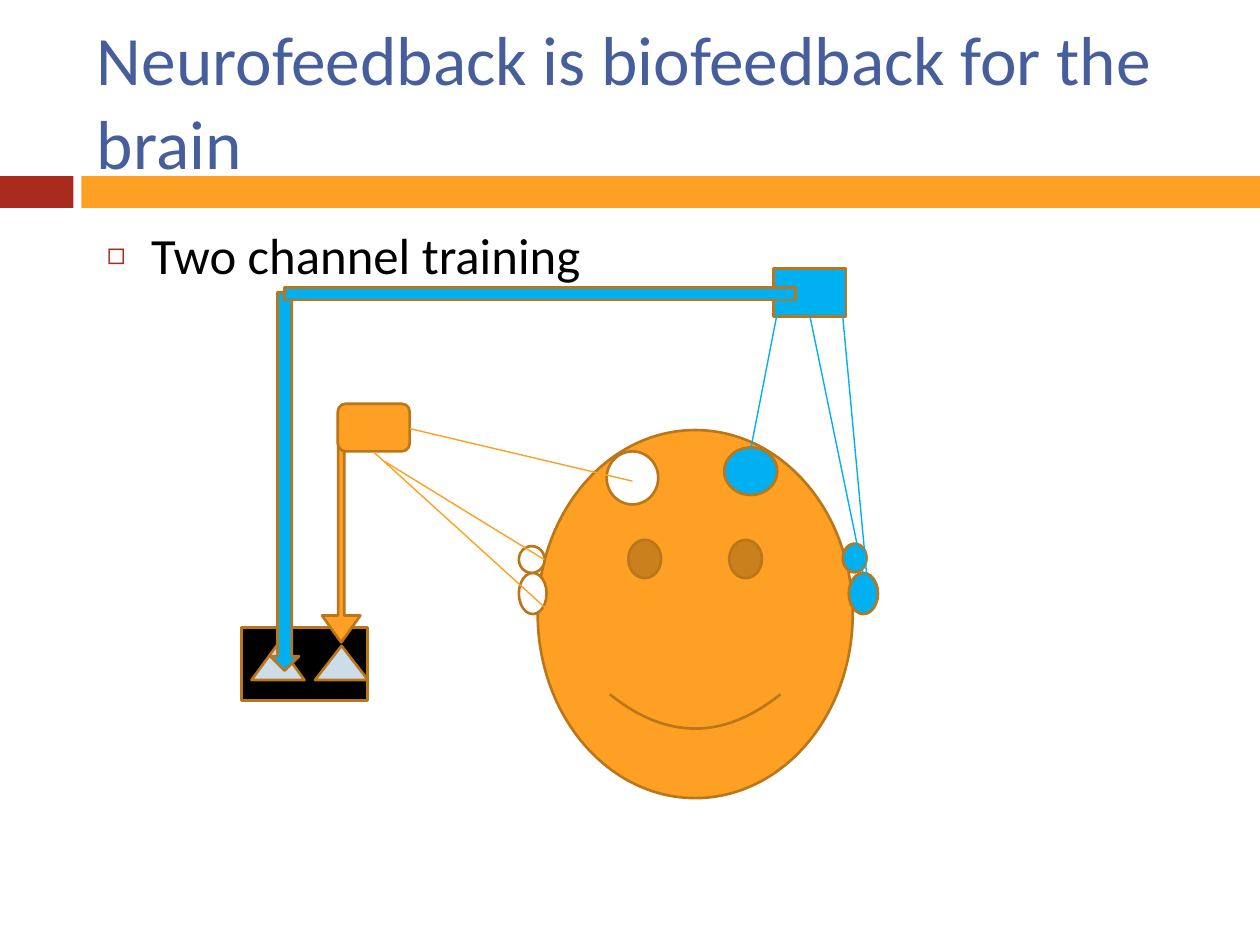
from lxml.etree import SubElement
from pptx import Presentation
from pptx.dml.color import RGBColor
from pptx.enum.shapes import MSO_CONNECTOR, MSO_SHAPE
from pptx.enum.text import MSO_ANCHOR, MSO_AUTO_SIZE, PP_ALIGN
from pptx.oxml.ns import qn
from pptx.util import Cm, Pt

ORANGE, BLUE, RED = "FDA023", "00B0F0", "AA2B1E"
BROWN, WHITE, BLACK, PALE = "BB761A", "FFFFFF", "000000", "CCDDEA"


def color(value):
    return RGBColor.from_string(value)


def write(box, text, *, size, fill, place, anchor, font="Calibri"):
    box.left, box.top, box.width, box.height = [Cm(length) for length in place]
    frame = box.text_frame
    frame.word_wrap = True
    frame.auto_size = MSO_AUTO_SIZE.NONE
    frame.vertical_anchor = anchor
    para = frame.paragraphs[0]
    para.alignment = PP_ALIGN.LEFT
    span = para.add_run()
    span.text = text
    span.font.size = Pt(size)
    span.font.name = font
    span.font.color.rgb = color(fill)
    return para


deck = Presentation()
deck.slide_width, deck.slide_height = Cm(25.4), Cm(19.05)
page = deck.slides.add_slide(deck.slide_layouts[1])

for left, width, fill in [(0, 1.48, RED), (1.64, 23.76, ORANGE)]:
    band = page.shapes.add_shape(MSO_SHAPE.RECTANGLE, Cm(left), Cm(3.55), Cm(width), Cm(0.64))
    band.shadow.inherit = False
    band.fill.solid()
    band.fill.fore_color.rgb = color(fill)
    band.line.fill.background()

write(page.shapes.title, "Neurofeedback is biofeedback for the brain", size=39.6,
      fill="465E9C", place=(1.7, 0.64, 22.66, 2.74), anchor=MSO_ANCHOR.MIDDLE)
item = write(page.placeholders[1], "Two channel training", size=29,
             fill=BLACK, place=(1.9, 4.39, 22.66, 12.5), anchor=MSO_ANCHOR.TOP)
item.space_before = Pt(7)
properties = item._p.get_or_add_pPr()
properties.set("marL", str(Cm(0.89)))
properties.set("indent", str(-Cm(0.89)))
bullet_color = SubElement(properties, qn("a:buClr"))
SubElement(bullet_color, qn("a:srgbClr"), val=RED)
SubElement(properties, qn("a:buSzPct"), val="60000")
SubElement(properties, qn("a:buChar"), char="◻")

figures = {
    "face": (MSO_SHAPE.SMILEY_FACE, 10.84, 8.67, 6.35, 7.42, ORANGE),
    "left ear lobe": (MSO_SHAPE.OVAL, 10.46, 11.55, 0.56, 0.83, WHITE),
    "screen": (MSO_SHAPE.RECTANGLE, 4.87, 12.65, 2.54, 1.47, BLACK),
    "left ear": (MSO_SHAPE.OVAL, 10.46, 11.01, 0.52, 0.54, WHITE),
    "left electrode": (MSO_SHAPE.OVAL, 12.23, 9.1, 1.04, 1.07, WHITE),
    "left signal": (MSO_SHAPE.ISOSCELES_TRIANGLE, 5.07, 12.98, 1.07, 0.73, PALE),
    "right signal": (MSO_SHAPE.ISOSCELES_TRIANGLE, 6.35, 13.02, 1.07, 0.69, PALE),
    "orange feed": (MSO_SHAPE.BENT_UP_ARROW, 6.49, 8.43, 1.55, 4.52, ORANGE),
    "orange amplifier": (MSO_SHAPE.ROUNDED_RECTANGLE, 6.81, 8.14, 1.45, 0.96, ORANGE),
    "right electrode": (MSO_SHAPE.OVAL, 14.6, 9.02, 1.07, 0.96, BLUE),
    "right ear": (MSO_SHAPE.OVAL, 16.99, 10.96, 0.48, 0.58, BLUE),
    "right ear lobe": (MSO_SHAPE.OVAL, 17.11, 11.55, 0.59, 0.83, BLUE),
    "blue amplifier": (MSO_SHAPE.RECTANGLE, 15.59, 5.41, 1.47, 0.97, BLUE),
    "blue feed down": (MSO_SHAPE.DOWN_ARROW, 5.45, 5.89, 0.58, 7.63, BLUE),
    "blue feed across": (MSO_SHAPE.RECTANGLE, 5.74, 5.8, 10.3, 0.25, BLUE),
}
for kind, left, top, width, height, fill in figures.values():
    figure = page.shapes.add_shape(kind, Cm(left), Cm(top), Cm(width), Cm(height))
    figure.shadow.inherit = False
    figure.fill.solid()
    figure.fill.fore_color.rgb = color(fill)
    figure.line.color.rgb = color(BROWN)
    figure.line.width = Pt(1.5)
    if kind == MSO_SHAPE.BENT_UP_ARROW:
        figure.rotation = 180
        for index, ratio in enumerate([0.08, 0.25, 0.35]):
            figure.adjustments[index] = ratio

wires = [
    (16.33, 6.38, 17.4, 11.56, BLUE),
    (16.99, 6.38, 17.5, 11.89, BLUE),
    (15.75, 5.89, 15.14, 9.02, BLUE),
    (7.54, 9.12, 13.39, 14.43, ORANGE),
    (7.75, 9.3, 10.97, 11.28, ORANGE),
    (8.26, 8.64, 12.75, 9.7, ORANGE),
]
for *ends, stroke in wires:
    wire = page.shapes.add_connector(MSO_CONNECTOR.STRAIGHT, *[Cm(end) for end in ends])
    wire.line.color.rgb = color(stroke)
    wire.line.width = Pt(0.79)
    SubElement(wire._element.spPr, qn("a:effectLst"))

deck.save("out.pptx")
